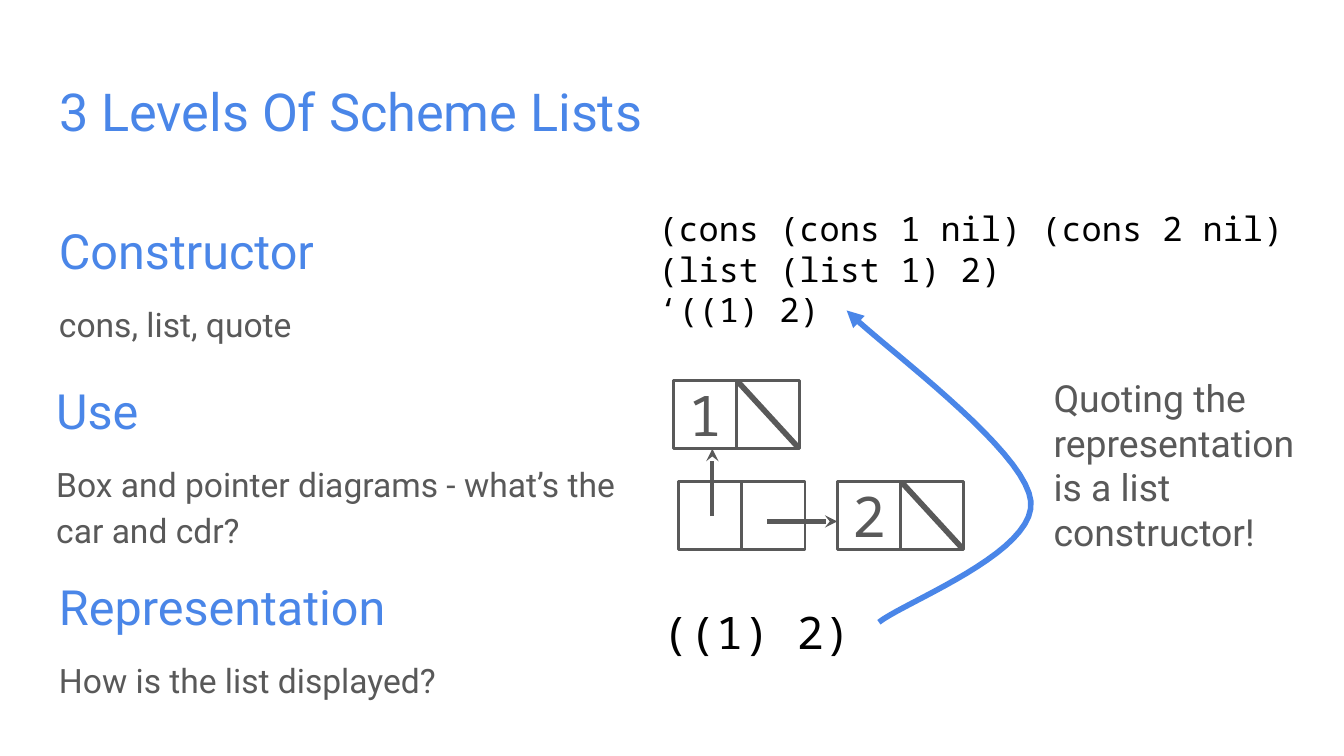
from dataclasses import dataclass

from lxml import etree
from pptx import Presentation
from pptx import util as u
from pptx.dml.color import RGBColor
from pptx.enum import shapes, text
from pptx.oxml import ns

I = u.Inches


@dataclass(frozen=True)
class Theme:
    blue: RGBColor = RGBColor(0x4A, 0x86, 0xE8)
    gray: RGBColor = RGBColor(0x59, 0x59, 0x59)
    black: RGBColor = RGBColor(0, 0, 0)
    sans: str = "Roboto"
    mono: str = "Noto Sans Mono"
    title: int = 28
    head: int = 26
    body: int = 18
    note: int = 20
    code: int = 24
    digit: int = 30


T = Theme()
CELL_W, CELL_H = 0.47, 0.51


def assign(obj, vals):
    for key, val in vals.items():
        setattr(obj, key, val)


def write(frame, rows, anchor=text.MSO_ANCHOR.TOP, **fmt):
    """Fill a frame with rows of (words, size, colour, font)."""
    assign(frame, {"word_wrap": True, "vertical_anchor": anchor,
                   "auto_size": text.MSO_AUTO_SIZE.NONE})
    assign(frame, {"margin_" + side: I(0.1)
                   for side in ("left", "right", "top", "bottom")})
    for i, (words, size, tone, face) in enumerate(rows):
        para = frame.add_paragraph() if i else frame.paragraphs[0]
        assign(para, {"alignment": text.PP_ALIGN.LEFT, **fmt})
        if i == 0:
            para.space_before = u.Pt(0)
        run = para.add_run()
        run.text = words
        assign(run.font, {"size": u.Pt(size), "name": face})
        run.font.color.rgb = tone


def label(slide, box, rows, **fmt):
    shape = slide.shapes.add_textbox(*map(I, box))
    write(shape.text_frame, rows, **fmt)


def level(slide, x, y, head, body):
    label(slide, (x, y, 4.45, 1.19),
          [(head, T.head, T.blue, T.sans), (body, T.body, T.gray, T.sans)],
          line_spacing=1.15, space_before=u.Pt(10))


def stroke(shape, tone, width, tip=None):
    shape.line.color.rgb = tone
    shape.line.width = u.Pt(width)
    if tip:
        edge = shape._element.spPr.find(ns.qn("a:ln"))
        end = etree.SubElement(edge, ns.qn("a:tailEnd"))
        end.set("type", tip)


def link(slide, start, end, width, tip=None):
    line = slide.shapes.add_connector(
        shapes.MSO_CONNECTOR.STRAIGHT, *map(I, (*start, *end)))
    stroke(line, T.gray, width, tip)
    etree.SubElement(line._element.spPr, ns.qn("a:effectLst"))


def pair(slide, x, y, digit=None):
    """Draw a cons cell; one that holds a digit ends its list with a slash."""
    for i in range(2):
        cell = slide.shapes.add_shape(
            shapes.MSO_SHAPE.RECTANGLE,
            *map(I, (x + i * CELL_W, y, CELL_W, CELL_H)))
        cell.shadow.inherit = False
        cell.fill.background()
        stroke(cell, T.gray, 1.5)
        if digit and i == 0:
            write(cell.text_frame, [(digit, T.digit, T.gray, T.mono)],
                  anchor=text.MSO_ANCHOR.MIDDLE,
                  alignment=text.PP_ALIGN.CENTER)
    if digit:
        left, top = x + CELL_W + 0.01, y + 0.01
        link(slide, (left, top), (left + 0.45, top + 0.49), 3)


def bezier(knots, t):
    parts = ((1 - t) ** 3, 3 * t * (1 - t) ** 2, 3 * t * t * (1 - t), t ** 3)
    return tuple(I(sum(p * k[axis] for p, k in zip(parts, knots)))
                 for axis in range(2))


def curve(slide, knots, steps=20):
    """Draw joined cubic curves that end in an arrowhead."""
    dots = [bezier(knots[i:i + 4], n / steps)
            for i in range(0, len(knots) - 1, 3)
            for n in range(1, steps + 1)]
    pen = slide.shapes.build_freeform(*map(I, knots[0]))
    pen.add_line_segments(dots, close=False)
    shape = pen.convert_to_shape()
    shape.shadow.inherit = False
    shape.fill.background()
    stroke(shape, T.blue, 3, "triangle")


def main():
    # A 16:9 page
    deck = Presentation()
    assign(deck, {"slide_width": I(10), "slide_height": I(10) * 9 // 16})
    slide = deck.slides.add_slide(deck.slide_layouts[5])

    # Title
    title = slide.shapes.title
    assign(title, dict(zip(("left", "top", "width", "height"),
                           map(I, (0.34, 0.49, 9.32, 0.63)))))
    write(title.text_frame,
          [("3 Levels Of Scheme Lists", T.title, T.blue, T.sans)])

    # Three levels
    level(slide, 0.34, 1.48, "Constructor", "cons, list, quote")
    level(slide, 0.32, 2.67, "Use",
          "Box and pointer diagrams - what’s the car and cdr?")
    level(slide, 0.34, 4.13, "Representation", "How is the list displayed?")

    # Code
    code = ("(cons (cons 1 nil) (cons 2 nil)", "(list (list 1) 2)", "‘((1) 2)")
    label(slide, (4.8, 1.45, 5.08, 1.24),
          [(row, T.body, T.black, T.mono) for row in code])
    label(slide, (4.83, 4.4, 5.08, 0.63),
          [("((1) 2)", T.code, T.black, T.mono)])

    # Box and pointer diagram
    pair(slide, 5.01, 2.83, "1")
    pair(slide, 5.05, 3.58)
    pair(slide, 6.23, 3.58, "2")
    link(slide, (5.3, 3.84), (5.3, 3.34), 2.25, "stealth")
    link(slide, (5.71, 3.88), (6.23, 3.88), 2.25, "stealth")

    # Arrow from the representation to the quoted form
    curve(slide, [(6.54, 4.63), (6.73, 4.48), (7.71, 4.11), (7.67, 3.73),
                  (7.63, 3.34), (6.53, 2.55), (6.3, 2.31)])
    label(slide, (7.74, 2.69, 2.01, 1.37),
          [("Quoting the representation is a list constructor!",
            T.note, T.gray, T.sans)])

    deck.save("out.pptx")


if __name__ == "__main__":
    main()
